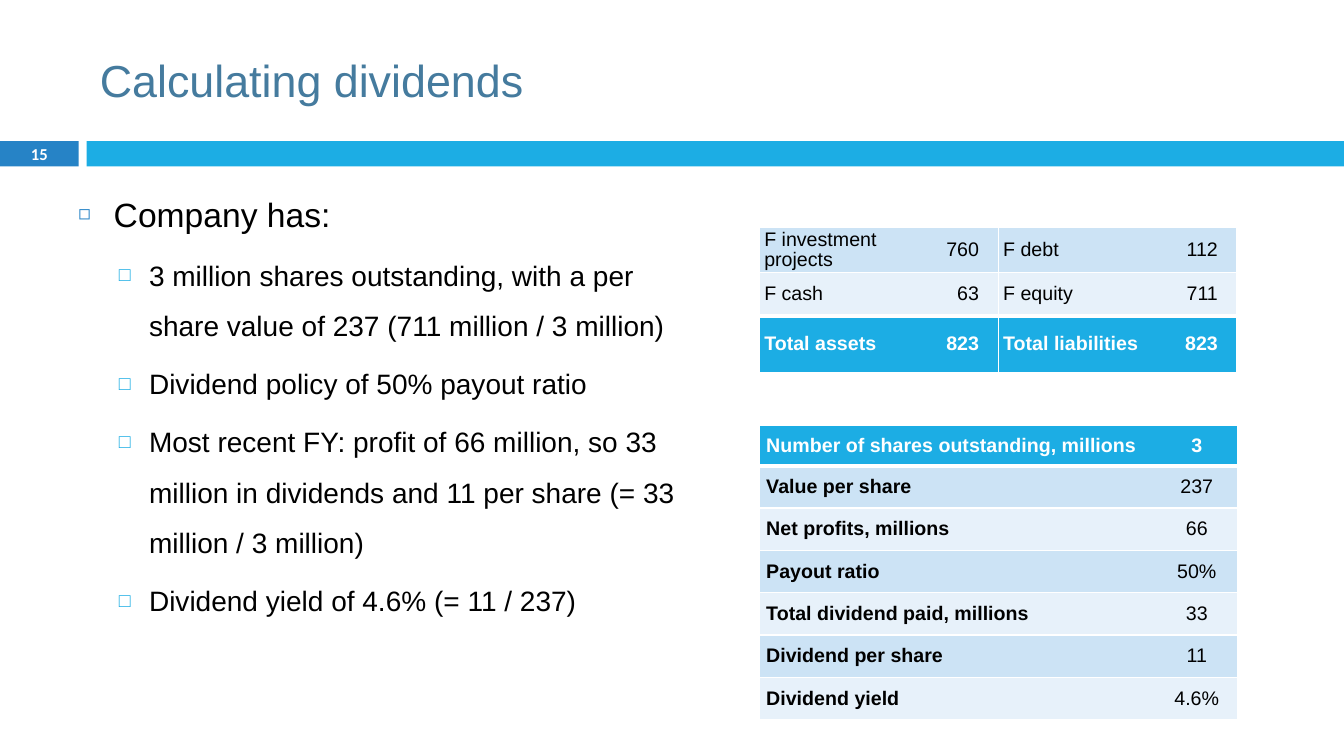
from dataclasses import dataclass

from lxml.etree import SubElement
from pptx import Presentation
from pptx.dml.color import RGBColor
from pptx.enum.shapes import MSO_SHAPE
from pptx.enum.text import MSO_ANCHOR, PP_ALIGN
from pptx.oxml.ns import qn
from pptx.slide import Slide
from pptx.table import Table, _Cell as Cell
from pptx.text.text import TextFrame, _Paragraph as Paragraph
from pptx.util import Inches, Pt

BLUE, CYAN, TITLE_BLUE = "2683C6", "1CADE4", "457B9E"
DARK_BAND, LIGHT_BAND = "CCE3F5", "E7F1FA"
BLACK, WHITE = "000000", "FFFFFF"
LEFT, CENTER, RIGHT = PP_ALIGN.LEFT, PP_ALIGN.CENTER, PP_ALIGN.RIGHT


@dataclass(frozen=True)
class Box:
    left: float
    top: float
    width: float
    height: float

    def lengths(self) -> list[Inches]:
        return [Inches(v) for v in (self.left, self.top, self.width, self.height)]


@dataclass(frozen=True)
class BulletStyle:
    symbol: str
    color: str
    percent: int
    margin: float
    hanging: float
    before: float
    size: float


@dataclass(frozen=True)
class CellStyle:
    fill: str
    color: str = BLACK
    bold: bool = False
    align: PP_ALIGN = LEFT
    inset: float = 0.05
    spacing: float = 0
    line_spacing: float = 1.0


@dataclass(frozen=True)
class Borders:
    left: float = 0
    right: float = 0
    top: float = 1
    bottom: float = 1


COMPANY = BulletStyle("◻", BLUE, 60, 0.35, 0.35, 7, 24)
FACT = BulletStyle("□", CYAN, 70, 0.7, 0.3, 5.5, 20)

POINTS = [
    (COMPANY, "Company has:"),
    (FACT, "3 million shares outstanding, with a per share value of 237 (711 million / 3 million)"),
    (FACT, "Dividend policy of 50% payout ratio"),
    (FACT, "Most recent FY: profit of 66 million, so 33 million in dividends and 11 per share (= 33 million / 3 million)"),
    (FACT, "Dividend yield of 4.6% (= 11 / 237)"),
]
BALANCE_SHEET = [
    ("F investment projects", "760", "", "F debt", "112", ""),
    ("F cash", "63", "", "F equity", "711", ""),
    ("Total assets", "823", "", "Total liabilities", "823", ""),
]
DIVIDENDS = [
    ("Number of shares outstanding, millions", "3"),
    ("Value per share", "237"),
    ("Net profits, millions", "66"),
    ("Payout ratio", "50%"),
    ("Total dividend paid, millions", "33"),
    ("Dividend per share", "11"),
    ("Dividend yield", "4.6%"),
]


def rgb(color: str) -> RGBColor:
    return RGBColor.from_string(color)


def add_run(paragraph: Paragraph, text: str, size: float, color: str,
            bold: bool = False, font: str = "Arial") -> None:
    run = paragraph.add_run()
    run.text = text
    run.font.name, run.font.size, run.font.bold = font, Pt(size), bold
    run.font.color.rgb = rgb(color)


def add_bar(slide: Slide, box: Box, color: str) -> None:
    bar = slide.shapes.add_shape(MSO_SHAPE.RECTANGLE, *box.lengths())
    bar.shadow.inherit = False
    bar.fill.solid()
    bar.fill.fore_color.rgb = rgb(color)
    bar.line.fill.background()


def add_text_box(slide: Slide, box: Box, anchor: MSO_ANCHOR) -> TextFrame:
    frame = slide.shapes.add_textbox(*box.lengths()).text_frame
    frame.word_wrap = True
    frame.vertical_anchor = anchor
    return frame


def set_bullet(paragraph: Paragraph, style: BulletStyle) -> None:
    paragraph.line_spacing = 1.5
    paragraph.space_before = Pt(style.before)
    properties = paragraph._p.get_or_add_pPr()
    properties.set("marL", str(Inches(style.margin)))
    properties.set("indent", str(-Inches(style.hanging)))
    color = SubElement(properties, qn("a:buClr"))
    SubElement(color, qn("a:srgbClr"), val=style.color)
    SubElement(properties, qn("a:buSzPct"), val=str(style.percent * 1000))
    SubElement(properties, qn("a:buFont"), typeface="Arial")
    SubElement(properties, qn("a:buChar"), char=style.symbol)


def set_borders(cell: Cell, borders: Borders) -> None:
    properties = cell._tc.get_or_add_tcPr()
    sides = {"L": borders.left, "R": borders.right, "T": borders.top, "B": borders.bottom}
    for side, width in sides.items():
        line = SubElement(properties, qn(f"a:ln{side}"), w=str(Pt(width)))
        if width:
            SubElement(SubElement(line, qn("a:solidFill")), qn("a:srgbClr"), val=WHITE)
        else:
            SubElement(line, qn("a:noFill"))


def fill_cell(cell: Cell, text: str, style: CellStyle, borders: Borders) -> None:
    set_borders(cell, borders)
    cell.fill.solid()
    cell.fill.fore_color.rgb = rgb(style.fill)
    cell.vertical_anchor = MSO_ANCHOR.MIDDLE
    cell.margin_left = cell.margin_right = Inches(style.inset)
    cell.margin_top = cell.margin_bottom = Inches(0)
    paragraph = cell.text_frame.paragraphs[0]
    paragraph.alignment = style.align
    paragraph.line_spacing = style.line_spacing
    paragraph.font.size = Pt(14)
    if style.spacing:
        paragraph.space_before = paragraph.space_after = Pt(style.spacing)
    if text:
        add_run(paragraph, text, 14, style.color, style.bold)


def add_grid(slide: Slide, box: Box, widths: list[float], heights: list[float]) -> Table:
    table = slide.shapes.add_table(len(heights), len(widths), *box.lengths()).table
    table.first_row = table.horz_banding = False
    for column, width in zip(table.columns, widths):
        column.width = Inches(width)
    for row, height in zip(table.rows, heights):
        row.height = Inches(height)
    return table


def add_balance_sheet(slide: Slide) -> None:
    table = add_grid(slide, Box(7.53, 2.26, 4.74, 1.42),
                     [1.75, 0.48, 0.14, 1.68, 0.55, 0.14], [0.43, 0.43, 0.56])
    for r, (row, fill) in enumerate(zip(BALANCE_SHEET, (DARK_BAND, LIGHT_BAND, CYAN))):
        total = r == 2
        for c, text in enumerate(row):
            part = c % 3
            style = CellStyle(fill, WHITE if total else BLACK, total,
                              RIGHT if part == 1 else LEFT, line_spacing=0.95)
            borders = Borders(int(part == 0), int(part == 2), 3 if total else 1, 3 if r == 1 else 1)
            fill_cell(table.cell(r, c), text, style, borders)


def add_dividends(slide: Slide) -> None:
    table = add_grid(slide, Box(7.53, 4.22, 4.74, 2.92), [3.94, 0.8], [0.4] + [0.42] * 6)
    for r, row in enumerate(DIVIDENDS):
        header = r == 0
        fill = CYAN if header else DARK_BAND if r % 2 else LIGHT_BAND
        for c, text in enumerate(row):
            style = CellStyle(fill, WHITE if header else BLACK, header or c == 0,
                              CENTER if c else LEFT, 0.07, 8 if header else 2)
            borders = Borders(1 - c, c, 3 if r == 1 else 1, 3 if header else 1)
            fill_cell(table.cell(r, c), text, style, borders)


def main() -> None:
    deck = Presentation()
    deck.slide_width, deck.slide_height = Inches(13.33), Inches(7.5)
    slide = deck.slides.add_slide(deck.slide_layouts[5])

    title = slide.shapes.title
    title.left, title.top, title.width, title.height = Box(0.89, 0.25, 11.89, 1.08).lengths()
    title.text_frame.vertical_anchor = MSO_ANCHOR.MIDDLE
    heading = title.text_frame.paragraphs[0]
    heading.alignment = LEFT
    add_run(heading, "Calculating dividends", 32, TITLE_BLUE)

    add_bar(slide, Box(0, 1.4, 0.78, 0.25), BLUE)
    add_bar(slide, Box(0.86, 1.4, 12.47, 0.25), CYAN)
    page_number = add_text_box(slide, Box(0, 1.39, 0.78, 0.27), MSO_ANCHOR.MIDDLE).paragraphs[0]
    page_number.alignment = CENTER
    add_run(page_number, "15", 11.9, WHITE, True, "Calibri")

    body = add_text_box(slide, Box(0.68, 1.67, 6.4, 5.39), MSO_ANCHOR.TOP)
    for i, (style, text) in enumerate(POINTS):
        point = body.add_paragraph() if i else body.paragraphs[0]
        set_bullet(point, style)
        add_run(point, text, style.size, BLACK)

    add_balance_sheet(slide)
    add_dividends(slide)
    deck.save("out.pptx")


if __name__ == "__main__":
    main()
